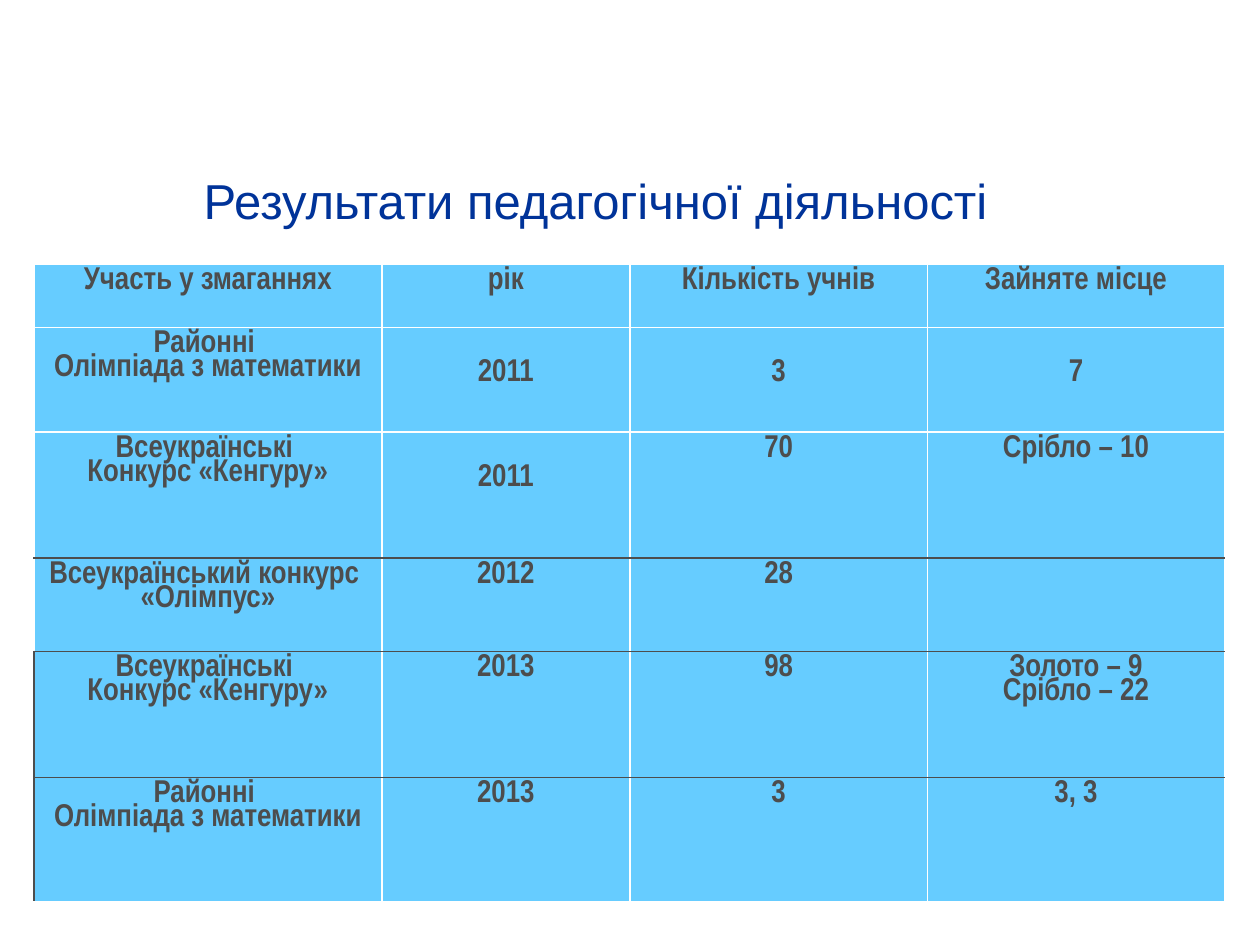
"""Build a slide with a table of pupils' competition results."""
from lxml.etree import SubElement
from pptx import Presentation
from pptx.dml.color import RGBColor
from pptx.enum.text import MSO_ANCHOR, PP_ALIGN
from pptx.oxml.ns import qn
from pptx.util import Inches, Pt

COLORS = {"title": "003399", "text": "4D4D4D", "cell": "66CCFF", "light": "FFFFFF", "dark": "4D4D4D"}
COLUMN_WIDTHS = [2.76, 1.97, 2.36, 2.36]
ROW_HEIGHTS = [0.5, 0.83, 1, 0.74, 1, 1]
OLYMPIAD = "Районні \nОлімпіада з математики"
KANGAROO = "Всеукраїнські \nКонкурс «Кенгуру»"
RESULTS = [
    ["Участь у змаганнях", "рік", "Кількість учнів", "Зайняте місце"],
    [OLYMPIAD, "2011", "3", "7"],
    [KANGAROO, "2011", "70", "Срібло – 10"],
    ["Всеукраїнський конкурс \n«Олімпус»", "2012", "28", ""],
    [KANGAROO, "2013", "98", "Золото – 9\nСрібло – 22"],
    [OLYMPIAD, "2013", "3", "3, 3"],
]
SECOND_LINE_CELLS = {(1, 1), (1, 2), (1, 3), (2, 1)}
FIRST_DARK_RULE = 3
FIRST_DARK_EDGE = 4


class SlideBuilder:
    def __init__(self, slide):
        self.slide = slide

    def format_paragraph(self, paragraph, font_name, size, color, bold=False):
        paragraph.alignment = PP_ALIGN.CENTER
        font = paragraph.font
        font.name, font.size, font.bold = font_name, Pt(size), bold
        font.color.rgb = RGBColor.from_string(COLORS[color])

    def add_title(self, text, left, top, width, height):
        title = self.slide.shapes.title
        title.left, title.top = Inches(left), Inches(top)
        title.width, title.height = Inches(width), Inches(height)
        frame = title.text_frame
        frame.text = text
        frame.vertical_anchor = MSO_ANCHOR.MIDDLE
        self.format_paragraph(frame.paragraphs[0], "Arial", 28, "title")

    def add_border(self, cell, side, color, width=1):
        line = SubElement(cell._tc.get_or_add_tcPr(), qn(f"a:ln{side}"), w=str(Pt(width)))
        fill = SubElement(line, qn("a:solidFill"))
        SubElement(fill, qn("a:srgbClr"), val=COLORS[color])

    def fill_cell(self, cell, text, row, column):
        last_row = len(RESULTS) - 1
        dark_edge = column == 0 and row >= FIRST_DARK_EDGE
        dark_bottom = FIRST_DARK_RULE <= row + 1 <= last_row
        self.add_border(cell, "L", "dark" if dark_edge else "light")
        self.add_border(cell, "R", "light")
        self.add_border(cell, "T", "dark" if row >= FIRST_DARK_RULE else "light")
        self.add_border(cell, "B", "dark" if dark_bottom else "light", 3 if row == last_row else 1)
        cell.fill.solid()
        cell.fill.fore_color.rgb = RGBColor.from_string(COLORS["cell"])
        cell.margin_left = cell.margin_right = Inches(0.1)
        cell.margin_top = Inches(0.28 if (row, column) in SECOND_LINE_CELLS else 0.05)
        cell.margin_bottom = Inches(0.05)
        cell.text_frame.text = text
        for paragraph in cell.text_frame.paragraphs:
            paragraph.line_spacing = 0.8
            self.format_paragraph(paragraph, "Arial Narrow", 18, "text", bold=True)

    def add_table(self, rows, left, top):
        table = self.slide.shapes.add_table(
            len(rows), len(COLUMN_WIDTHS), Inches(left), Inches(top),
            Inches(sum(COLUMN_WIDTHS)), Inches(sum(ROW_HEIGHTS))).table
        for column, width in zip(table.columns, COLUMN_WIDTHS):
            column.width = Inches(width)
        for row, height in zip(table.rows, ROW_HEIGHTS):
            row.height = Inches(height)
        for row_index, texts in enumerate(rows):
            for column_index, text in enumerate(texts):
                self.fill_cell(table.cell(row_index, column_index), text, row_index, column_index)


def main():
    presentation = Presentation()
    presentation.slide_width, presentation.slide_height = Inches(10), Inches(7.5)
    builder = SlideBuilder(presentation.slides.add_slide(presentation.slide_layouts[5]))
    builder.add_title("Результати педагогічної діяльності", 1.14, 1.31, 7.17, 0.56)
    builder.add_table(RESULTS, 0.27, 2.1)
    presentation.save("out.pptx")


if __name__ == "__main__":
    main()
